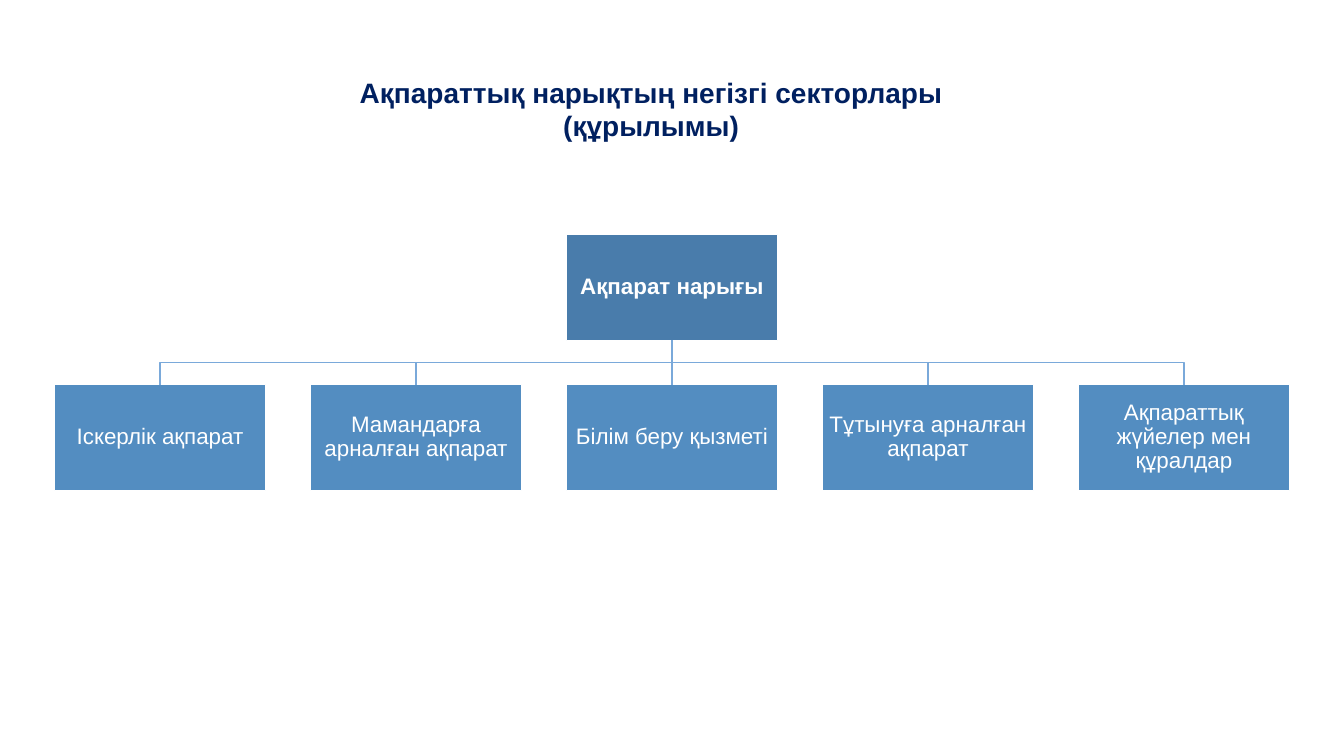
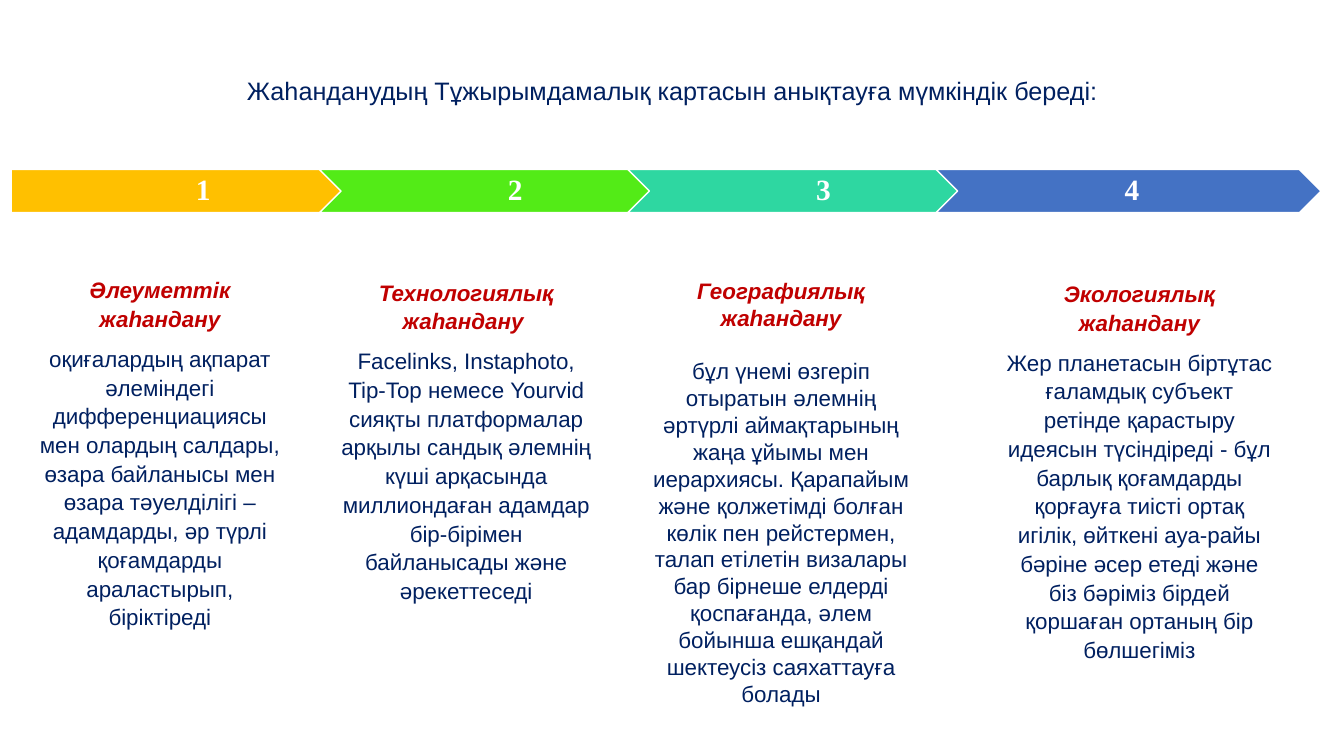
from pptx import Presentation
from pptx import util as u
from pptx.dml.color import RGBColor
from pptx.enum import shapes, text
from pptx.oxml.ns import qn

NAVY, RED, WHITE = "002060", "C00000", "FFFFFF"
ROOT_BLUE, BRANCH_BLUE, LINK_BLUE = "497CAB", "538DC1", "7AA9DA"
BODY_FONT, NUMBER_FONT = "Arial", "Times New Roman"

SECTORS_TITLE = "Ақпараттық нарықтың негізгі секторлары (құрылымы)"
MARKET = "Ақпарат нарығы"
SECTORS = [
    "Іскерлік ақпарат",
    "Мамандарға арналған ақпарат",
    "Білім беру қызметі",
    "Тұтынуға арналған ақпарат",
    "Ақпараттық жүйелер мен құралдар",
]

MAP_TITLE = "Жаһанданудың Тұжырымдамалық картасын анықтауға мүмкіндік береді:"
STEP_COLORS = ["FFC000", "53EB17", "2ED7A1", "4472C4"]
# left, top, width, height in cm; line spacing; space after in points; heading; body
COLUMNS = [
    (0.74, 6.79, 6.58, 10.01, 1.07, 8, "Әлеуметтік жаһандану",
     "оқиғалардың ақпарат әлеміндегі дифференциациясы мен олардың салдары, "
     "өзара байланысы мен өзара тәуелділігі – адамдарды, әр түрлі қоғамдарды "
     "араластырып, біріктіреді"),
    (8.26, 6.85, 6.98, 8.53, 1.07, 8, "Технологиялық жаһандану ",
     "Facelinks, Instaphoto, Tip-Top немесе Yourvid сияқты платформалар арқылы "
     "сандық әлемнің күші арқасында миллиондаған адамдар бір-бірімен "
     "байланысады және әрекеттеседі"),
    (16.04, 6.86, 7.29, 11.2, 1.0, 19, "Географиялық жаһандану",
     "бұл үнемі өзгеріп отыратын әлемнің әртүрлі аймақтарының жаңа ұйымы мен "
     "иерархиясы. Қарапайым және қолжетімді болған көлік пен рейстермен, талап "
     "етілетін визалары бар бірнеше елдерді қоспағанда, әлем бойынша ешқандай "
     "шектеусіз саяхаттауға болады"),
    (25.07, 6.89, 7.29, 10.01, 1.07, 8, "Экологиялық жаһандану",
     "Жер планетасын біртұтас ғаламдық субъект ретінде қарастыру идеясын "
     "түсіндіреді - бұл барлық қоғамдарды қорғауға тиісті ортақ игілік, өйткені "
     "ауа-райы бәріне әсер етеді және біз бәріміз бірдей қоршаған ортаның бір "
     "бөлшегіміз"),
]

BOX_WIDTH, BOX_HEIGHT = u.Cm(5.33), u.Cm(2.67)
BOX_LEFT, BOX_PITCH = u.Cm(1.37), u.Cm(6.45)
ROOT_TOP, BRANCH_TOP = u.Cm(5.91), u.Cm(9.69)
STEP_LEFT, STEP_TOP, STEP_PITCH = u.Cm(0.28), u.Cm(4.27), u.Cm(7.77)
STEP_WIDTH, STEP_HEIGHT = u.Cm(9.7), u.Cm(1.09)


def rgb(value):
    return RGBColor.from_string(value)


def write(paragraph, words, size, color, bold=False, italic=False,
          font=BODY_FONT, spacing=1.0, after=0):
    paragraph.alignment = text.PP_ALIGN.CENTER
    paragraph.line_spacing = spacing
    paragraph.space_after = u.Pt(after)
    run = paragraph.add_run()
    run.text = words
    run.font.size, run.font.name = u.Pt(size), font
    run.font.bold, run.font.italic = bold, italic
    run.font.color.rgb = rgb(color)


def add_text_frame(slide, left, top, width, height):
    box = slide.shapes.add_textbox(u.Cm(left), u.Cm(top), u.Cm(width), u.Cm(height))
    box.text_frame.word_wrap = True
    box.text_frame.auto_size = text.MSO_AUTO_SIZE.SHAPE_TO_FIT_TEXT
    return box.text_frame


def add_block(slide, kind, left, top, width, height, fill, words, size, insets,
              **style):
    """Add a filled, white-edged shape; insets are left, top, right, bottom in cm."""
    shape = slide.shapes.add_shape(kind, left, top, width, height)
    shape.shadow.inherit = False
    shape.fill.solid()
    shape.fill.fore_color.rgb = rgb(fill)
    shape.line.color.rgb = rgb(WHITE)
    shape.line.width = u.Pt(1)
    frame = shape.text_frame
    frame.word_wrap = True
    frame.vertical_anchor = text.MSO_ANCHOR.MIDDLE
    (frame.margin_left, frame.margin_top,
     frame.margin_right, frame.margin_bottom) = map(u.Cm, insets)
    write(frame.paragraphs[0], words, size, WHITE, spacing=0.9, **style)
    return shape


def add_box(slide, column, top, fill, words, bold=False):
    return add_block(slide, shapes.MSO_SHAPE.RECTANGLE, BOX_LEFT + int(column * BOX_PITCH),
                     top, BOX_WIDTH, BOX_HEIGHT, fill, words, 16, [0.03] * 4, bold=bold)


def turn_downward(link, to_right):
    """Rotate an elbow so that it leaves and arrives vertically."""
    left, top, width, height = link.left, link.top, link.width, link.height
    link.left = left + (width - height) // 2
    link.top = top + (height - width) // 2
    link.width, link.height = height, width
    frame = link._element.spPr.find(qn("a:xfrm"))
    frame.set("rot", "16200000" if to_right else "5400000")
    frame.set("flipH", "1" if to_right else "0")


def link_boxes(slide, root, branch):
    offset = branch.left - root.left
    kind = shapes.MSO_CONNECTOR.ELBOW if offset else shapes.MSO_CONNECTOR.STRAIGHT
    link = slide.shapes.add_connector(kind, 0, 0, 0, 0)
    link.begin_connect(root, 2)
    link.end_connect(branch, 0)
    if offset:
        turn_downward(link, offset > 0)
    link.line.color.rgb = rgb(LINK_BLUE)
    link.line.width = u.Pt(1)
    properties = link._element.spPr
    properties.append(properties.makeelement(qn("a:effectLst"), {}))


def build_sectors(slide):
    title = add_text_frame(slide, 7.94, 1.77, 16.94, 1.96)
    write(title.paragraphs[0], SECTORS_TITLE, 20, NAVY, bold=True)

    root = add_box(slide, (len(SECTORS) - 1) // 2, ROOT_TOP, ROOT_BLUE, MARKET, True)
    for column, sector in enumerate(SECTORS):
        branch = add_box(slide, column, BRANCH_TOP, BRANCH_BLUE, sector)
        link_boxes(slide, root, branch)


def build_map(slide):
    title = add_text_frame(slide, 2.01, 1.71, 29.87, 1.02)
    write(title.paragraphs[0], MAP_TITLE, 18, NAVY, spacing=1.07, after=8)

    for index, color in enumerate(STEP_COLORS):
        first = index == 0
        kind = shapes.MSO_SHAPE.PENTAGON if first else shapes.MSO_SHAPE.CHEVRON
        insets = (0.34 if first else 0.25, 0.15, 0.08, 0.15)
        add_block(slide, kind, STEP_LEFT + index * STEP_PITCH, STEP_TOP, STEP_WIDTH,
                  STEP_HEIGHT, color, str(index + 1), 21, insets,
                  bold=True, font=NUMBER_FONT)

    for left, top, width, height, spacing, after, heading, body in COLUMNS:
        frame = add_text_frame(slide, left, top, width, height)
        write(frame.paragraphs[0], heading, 16, RED, bold=True, italic=True,
              spacing=spacing, after=after)
        write(frame.add_paragraph(), body, 16, NAVY, spacing=spacing)


def main():
    presentation = Presentation()
    presentation.slide_width, presentation.slide_height = u.Cm(33.87), u.Cm(19.05)
    blank = presentation.slide_layouts[6]
    for build in (build_sectors, build_map):
        build(presentation.slides.add_slide(blank))
    presentation.save("out.pptx")


if __name__ == "__main__":
    main()
